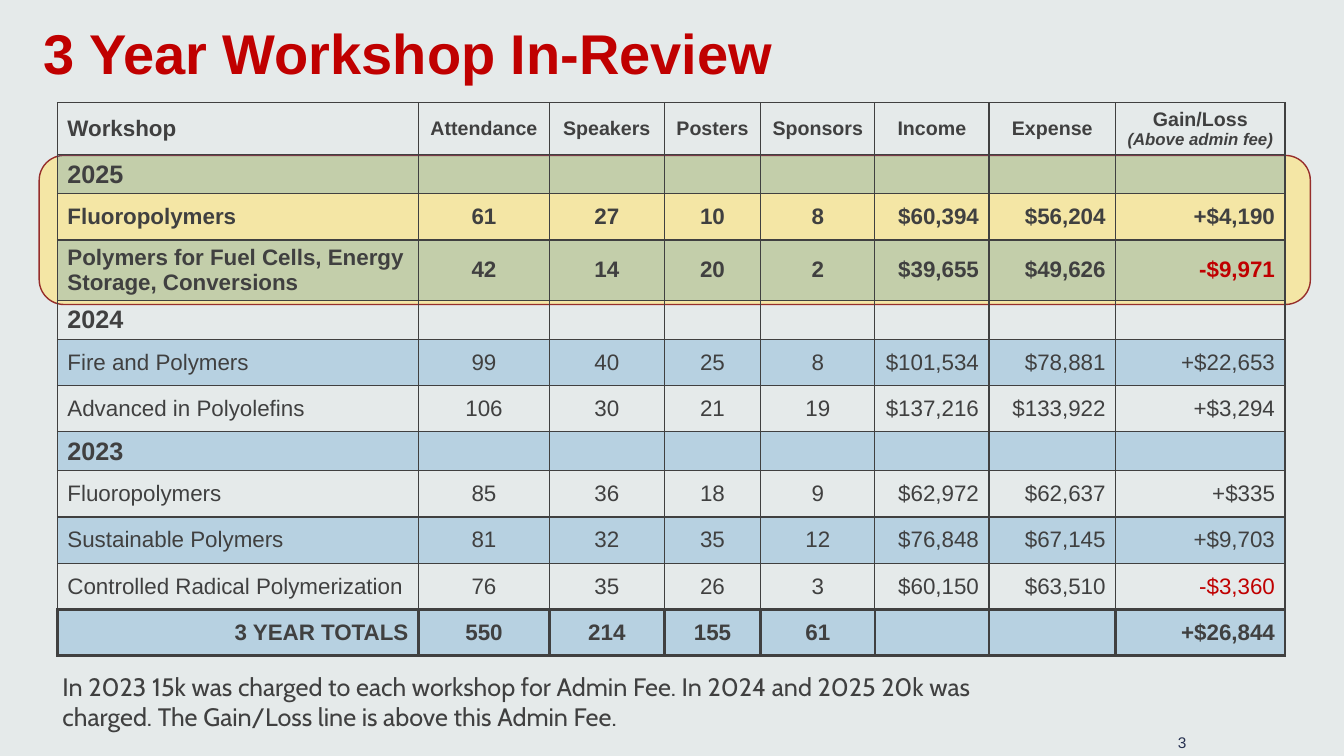
"""Build the three-year workshop review slide."""
from lxml import etree
from pptx import Presentation
from pptx.dml.color import RGBColor
from pptx.enum import shapes, text
from pptx.oxml import ns
from pptx.util import Pt

PAPER = RGBColor(0xE5, 0xEA, 0xEA)
INK = RGBColor(0x40, 0x40, 0x40)
RED = RGBColor(0xC0, 0x00, 0x00)
BLUE = RGBColor(0x00, 0x70, 0xC0)
SAND = RGBColor(0xF4, 0xE6, 0xA5)
RUST = RGBColor(0x96, 0x2E, 0x2B)
NAVY = RGBColor(0x26, 0x30, 0x50)
LEFT, MID, RIGHT = text.PP_ALIGN.LEFT, text.PP_ALIGN.CENTER, text.PP_ALIGN.RIGHT


def write(para, words, size, color=INK, align=LEFT, **style):
    para.alignment = align
    run = para.add_run()
    run.text = words
    run.font.color.rgb = color
    look = {"name": "Arial", "size": Pt(size), **style}
    for key, val in look.items():
        setattr(run.font, key, val)


def edge(cell, thick):
    props = cell._tc.get_or_add_tcPr()
    for spot, side in enumerate(("lnL", "lnR", "lnT", "lnB")):
        width = thick[side] if side in thick else 1
        line = etree.Element(ns.qn(f"a:{side}"), w=str(Pt(width)))
        fill = etree.SubElement(line, ns.qn("a:solidFill"))
        etree.SubElement(fill, ns.qn("a:srgbClr"), val=str(INK))
        props.insert(spot, line)


deck = Presentation()
deck.slide_width, deck.slide_height = Pt(960), Pt(540)
slide = deck.slides.add_slide(deck.slide_layouts[6])
slide.background.fill.solid()
slide.background.fill.fore_color.rgb = PAPER

band = slide.shapes.add_shape(
    shapes.MSO_SHAPE.ROUNDED_RECTANGLE, Pt(28), Pt(111), Pt(908), Pt(106.5))
band.shadow.inherit = False
band.fill.solid()
band.fill.fore_color.rgb = SAND
band.line.color.rgb = RUST
band.line.width = Pt(1)

rows = [
    ["Workshop", "Attendance", "Speakers", "Posters", "Sponsors", "Income", "Expense", "Gain/Loss"],
    ["2025"],
    ["Fluoropolymers", "61", "27", "10", "8", "$60,394", "$56,204", "+$4,190"],
    ["Polymers for Fuel Cells, Energy Storage, Conversions",
     "42", "14", "20", "2", "$39,655", "$49,626", "-$9,971"],
    ["2024"],
    ["Fire and Polymers", "99", "40", "25", "8", "$101,534", "$78,881", "+$22,653"],
    ["Advanced in Polyolefins", "106", "30", "21", "19", "$137,216", "$133,922", "+$3,294"],
    ["2023"],
    ["Fluoropolymers", "85", "36", "18", "9", "$62,972", "$62,637", "+$335"],
    ["Sustainable Polymers", "81", "32", "35", "12", "$76,848", "$67,145", "+$9,703"],
    ["Controlled Radical Polymerization", "76", "35", "26", "3", "$60,150", "$63,510", "-$3,360"],
    ["3 YEAR TOTALS", "550", "214", "155", "61", "", "", "+$26,844"],
]
widths = [258, 93.5, 82, 69, 81.5, 81.5, 90.5, 121]
tall = {0: 37, 3: 43}
last = len(rows) - 1

frame = slide.shapes.add_table(
    len(rows), len(widths), Pt(41), Pt(73.5), Pt(sum(widths)), Pt(392))
grid = frame.table
grid.first_row = grid.horz_banding = False
for col, width in zip(grid.columns, widths):
    col.width = Pt(width)

for r, row in enumerate(rows):
    year = len(row) == 1
    grid.rows[r].height = Pt(27 if year else tall.get(r, 33))
    for c in range(len(widths)):
        cell = grid.cell(r, c)
        cell.vertical_anchor = text.MSO_ANCHOR.MIDDLE
        cell.margin_top = cell.margin_bottom = Pt(3)
        if r % 2:
            cell.fill.solid()
            cell.fill.fore_color.rgb = BLUE
            tint = cell._tc.tcPr.find(".//" + ns.qn("a:srgbClr"))
            etree.SubElement(tint, ns.qn("a:alpha"), val="20000")
        else:
            cell.fill.background()
        if r == last:
            edge(cell, dict.fromkeys(("lnL", "lnR", "lnT", "lnB"), 2.25))
        else:
            edge(cell, {"lnB": 2.25} if r == last - 1 else {})
        words = row[c] if c < len(row) else ""
        if not words:
            continue
        size = 18 if year else 14 if r == 0 and c else 16
        if c == 0:
            align = RIGHT if r == last else LEFT
        else:
            align = MID if r == 0 or c < 5 else RIGHT
        write(cell.text_frame.paragraphs[0], words, size,
              RED if words.startswith("-") else INK, align,
              bold=r < 4 or year or r == last)

write(grid.cell(0, 7).text_frame.add_paragraph(), "(Above admin fee)", 12,
      align=MID, bold=True, italic=True)

notes = [
    ((24, 21.5, 862, 44), text.MSO_ANCHOR.BOTTOM, "3 Year Workshop In-Review",
     {"size": 40, "color": RED, "bold": True}),
    ((37.5, 476, 716.5, 51), text.MSO_ANCHOR.TOP,
     "In 2023 15k was charged to each workshop for Admin Fee. In 2024 and 2025 20k was "
     "charged. The Gain/Loss line is above this Admin Fee.",
     {"size": 18, "name": "Cabin"}),
    ((804, 520.5, 50.5, 19), text.MSO_ANCHOR.MIDDLE, "3",
     {"size": 11, "color": NAVY, "align": RIGHT}),
]
for place, anchor, words, style in notes:
    box = slide.shapes.add_textbox(*map(Pt, place)).text_frame
    box.word_wrap = True
    box.vertical_anchor = anchor
    write(box.paragraphs[0], words, **style)
    if anchor == text.MSO_ANCHOR.BOTTOM:
        box.paragraphs[0].line_spacing = 0.9

deck.save("out.pptx")
